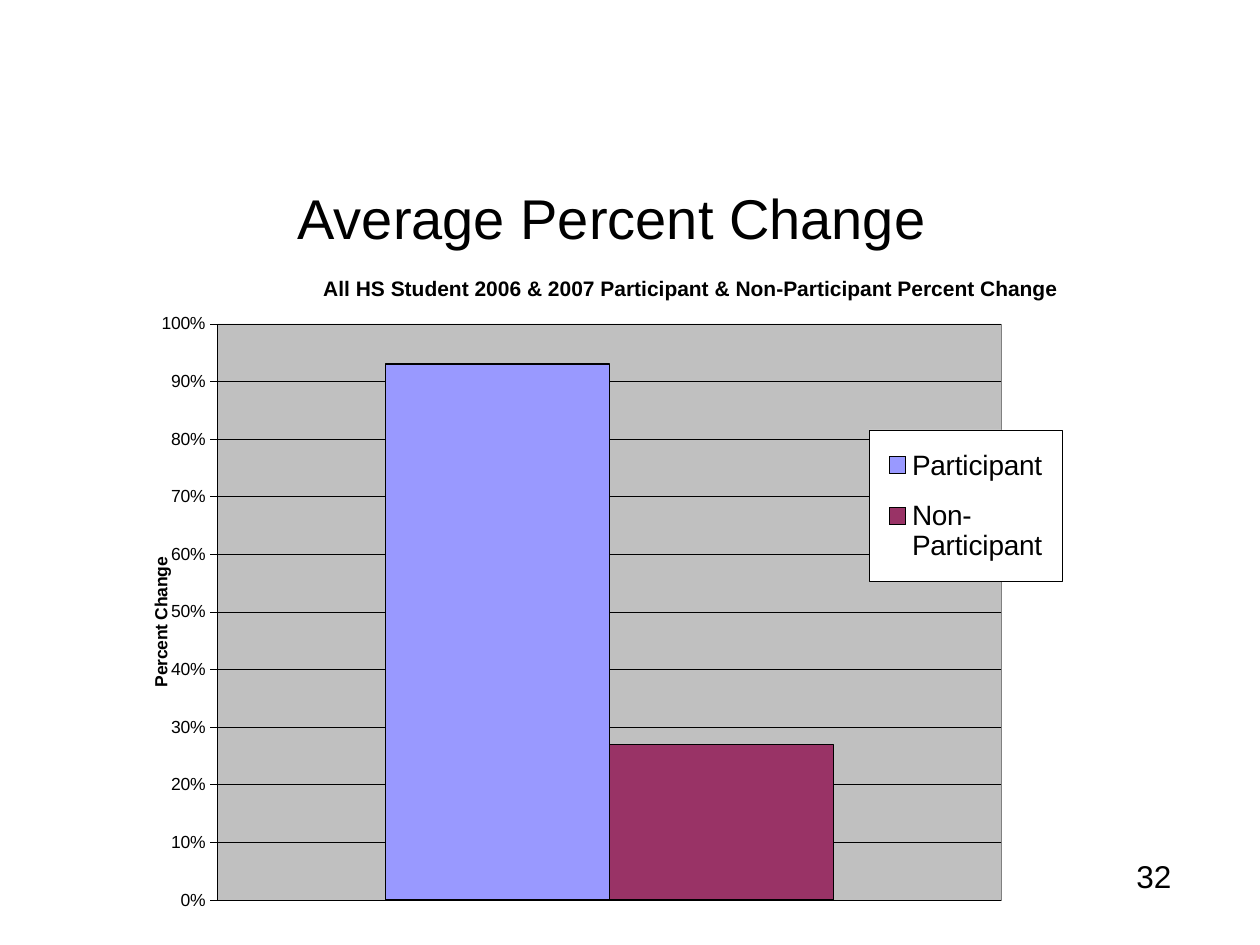
"""Build the slide on average percent change."""
from lxml.etree import SubElement as Sub
from pptx import Presentation
from pptx.chart.data import CategoryChartData as Data
from pptx.dml.color import RGBColor as Rgb
from pptx.enum.chart import XL_CHART_TYPE as Kind, XL_LEGEND_POSITION as Pos, XL_TICK_MARK as Tick
from pptx.enum.text import MSO_ANCHOR as Anchor, PP_ALIGN as Align
from pptx.oxml import parse_xml
from pptx.oxml.ns import nsdecls, qn
from pptx.util import Cm, Pt

HUES = {"ink": "000000", "plot": "C0C0C0", "edge": "808080", "box": "FFFFFF",
        "Participant": "9999FF", "Non-Participant": "993366"}


def style(font, size, bold=False):
    font.name, font.size, font.bold = "Arial", Pt(size), bold
    font.color.rgb = Rgb.from_string(HUES["ink"])


def place(node, spot, index, **area):
    for old in node.findall(qn("c:layout")):
        node.remove(old)
    lay = parse_xml(f"<c:layout {nsdecls('c')}/>")
    node.insert(index, lay)
    man = Sub(lay, qn("c:manualLayout"))
    vals = {**area, "xMode": "edge", "yMode": "edge", **dict(zip("xywh", spot))}
    for tag, val in vals.items():
        Sub(man, qn(f"c:{tag}")).set("val", str(val))


deck = Presentation()
deck.slide_width, deck.slide_height = Cm(25.4), Cm(19.05)
slide = deck.slides.add_slide(deck.slide_layouts[6])

texts = [
    ("Average Percent Change", (2.11, 2.74, 20.45, 3.28), 32, Align.CENTER, Anchor.MIDDLE),
    ("32", (22.66, 17.15, 2.34, 1.27), 18, Align.LEFT, Anchor.TOP),
]
for text, spot, size, align, anchor in texts:
    frame = slide.shapes.add_textbox(*map(Cm, spot)).text_frame
    frame.word_wrap, frame.vertical_anchor = True, anchor
    para = frame.paragraphs[0]
    para.alignment = align
    run = para.add_run()
    run.text = text
    style(run.font, size)

data = Data(number_format="0%")
data.categories = ["1"]
data.add_series("Participant", [0.93])
data.add_series("Non-Participant", [0.27])
chart = slide.shapes.add_chart(
    Kind.COLUMN_CLUSTERED, Cm(2.54), Cm(5.08), Cm(20.52), Cm(13.54), data).chart
style(chart.font, 10)
chart.category_axis.visible = False

axis = chart.value_axis
axis.minimum_scale, axis.maximum_scale, axis.major_unit = 0, 1, 0.1
axis.major_tick_mark = Tick.CROSS
axis.tick_labels.number_format = "0%"
axis.tick_labels.number_format_is_linked = False
style(axis.tick_labels.font, 10)

heads = [(chart, "All HS Student 2006 & 2007 Participant & Non-Participant Percent Change", 12),
         (axis, "Percent Change", 10)]
for part, text, size in heads:
    title = part.chart_title if part is chart else part.axis_title
    run = title.text_frame.paragraphs[0].add_run()
    run.text = text
    style(run.font, size, True)

plot = chart.plots[0]
plot.gap_width, plot.overlap, plot.vary_by_categories = 150, 0, False
for bar in plot.series:
    bar.format.fill.solid()
    bar.format.fill.fore_color.rgb = Rgb.from_string(HUES[bar.name])
    bar.format.line.color.rgb = Rgb.from_string(HUES["ink"])
    bar.format.line.width = Pt(1)
for part in (axis, axis.major_gridlines):
    part.format.line.color.rgb = Rgb.from_string(HUES["ink"])
    part.format.line.width = Pt(0.25)

chart.has_legend = True
key = chart.legend
key.position, key.include_in_layout = Pos.RIGHT, False
style(key.font, 16)

root = chart.element if hasattr(chart, "element") else chart._chartSpace
area = root.find(".//" + qn("c:plotArea"))
box = root.find(".//" + qn("c:legend"))
place(root.find(qn("c:chart")).find(qn("c:title")), (0.19, 0.03), 1)
place(area.find(qn("c:valAx")).find(qn("c:title")), (0.02, 0.45), 1)
place(area, (0.09, 0.107, 0.77, 0.858), 0, layoutTarget="inner")
place(box, (0.73, 0.265, 0.19, 0.225), 1)

for node, fill, line in ((area, "plot", "edge"), (box, "box", "ink")):
    look = parse_xml(
        f'<c:spPr {nsdecls("c", "a")}><a:solidFill><a:srgbClr val="{HUES[fill]}"/></a:solidFill>'
        f'<a:ln w="3175"><a:solidFill><a:srgbClr val="{HUES[line]}"/></a:solidFill></a:ln></c:spPr>')
    text = node.find(qn("c:txPr"))
    if text is None:
        node.append(look)
    else:
        text.addprevious(look)

deck.save("out.pptx")
